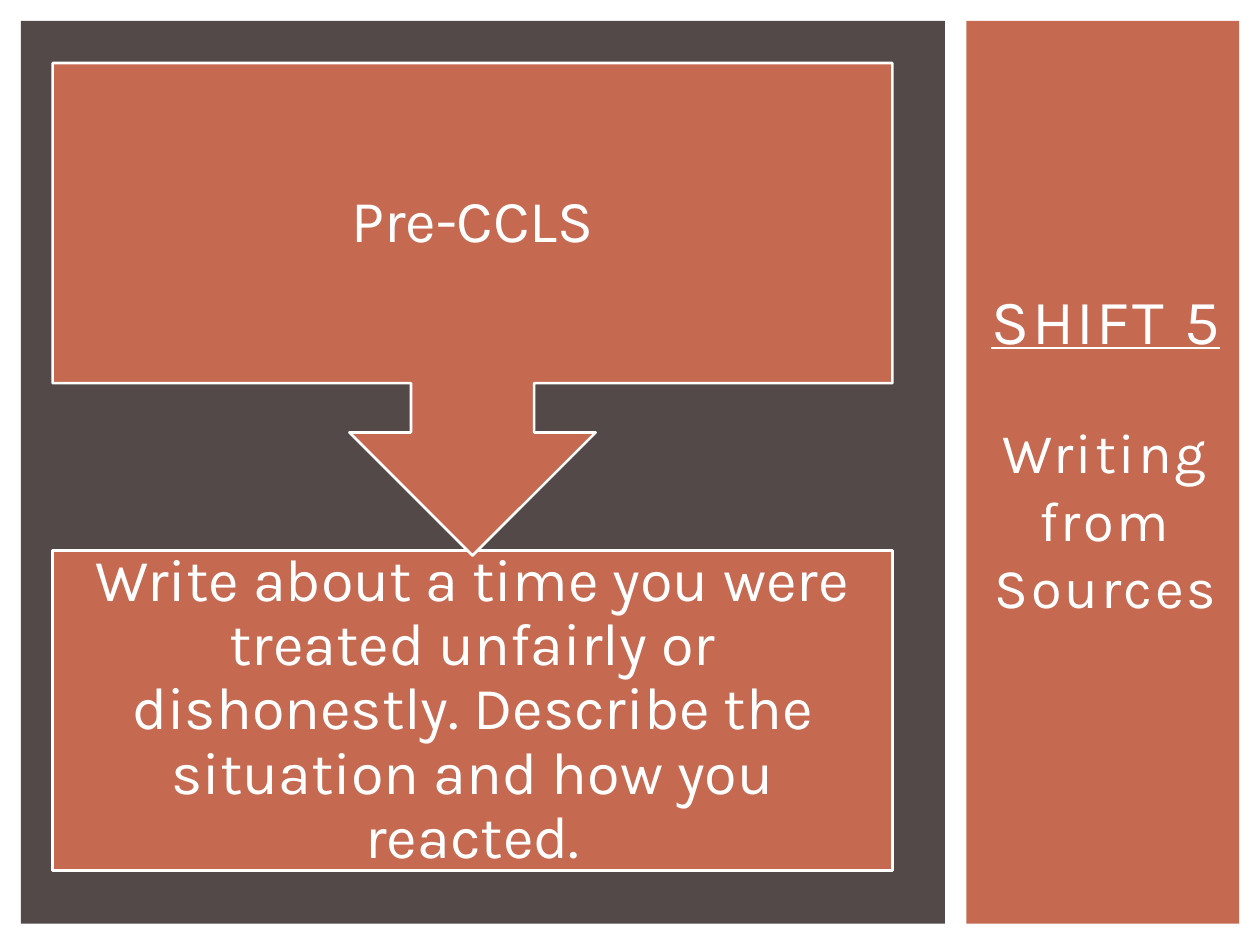
from pptx import Presentation
from pptx.dml.color import RGBColor
from pptx.enum.shapes import MSO_SHAPE as Shape
from pptx.enum.text import MSO_ANCHOR as Anchor, MSO_AUTO_SIZE as AutoSize, PP_ALIGN as Align
from pptx.util import Cm, Pt

RUST, BROWN, WHITE = "C66951", "534949", "FFFFFF"


def color(hex_string):
    """Turn a hex string into a colour."""
    return RGBColor.from_string(hex_string)


def add_block(slide, kind, box, fill, line=None):
    """Add a flat filled shape in a box given in centimetres."""
    shape = slide.shapes.add_shape(kind, *map(Cm, box))
    shape.shadow.inherit = False
    shape.fill.solid()
    shape.fill.fore_color.rgb = color(fill)
    if line:
        shape.line.color.rgb = color(line)
        shape.line.width = Pt(1.5)
    else:
        shape.line.fill.background()
    return shape


def format_paragraph(paragraph, size):
    """Centre a paragraph and give its runs the slide font."""
    paragraph.alignment = Align.CENTER
    for run in paragraph.runs:
        run.font.name = "Karla"
        run.font.size = Pt(size)
        run.font.color.rgb = color(WHITE)


def add_label(slide, box, text):
    """Add a centred, wrapping label in a box."""
    frame = slide.shapes.add_textbox(*map(Cm, box)).text_frame
    frame.word_wrap = True
    frame.vertical_anchor = Anchor.MIDDLE
    frame.margin_left = frame.margin_right = Cm(0.66)
    frame.margin_top = frame.margin_bottom = Cm(0.66)
    frame.text = text
    paragraph = frame.paragraphs[0]
    paragraph.line_spacing = 0.9
    format_paragraph(paragraph, 34)


def add_flow(slide, box, first, second):
    """Add a callout that points down to a second block."""
    left, top, width, height = box
    block_height = 6.45
    lower = (left, top + height - block_height, width, block_height)
    add_block(slide, Shape.RECTANGLE, lower, RUST, WHITE)
    add_label(slide, lower, second)
    callout = add_block(slide, Shape.UP_ARROW_CALLOUT, (left, top, width, 9.93), RUST, WHITE)
    callout.rotation = 180
    add_label(slide, (left, top, width, block_height), first)


def add_sidebar(slide, box, heading, topic):
    """Add the coloured sidebar and place the subtitle on it."""
    left, top, width, height = box
    panel = add_block(slide, Shape.RECTANGLE, box, RUST)
    subtitle = slide.placeholders[1]
    panel._element.addnext(subtitle._element)
    subtitle.left, subtitle.top = Cm(left + 0.21), Cm(top + 1.27)
    subtitle.width, subtitle.height = Cm(width - 0.3), Cm(height - 2.75)
    frame = subtitle.text_frame
    frame.auto_size = AutoSize.NONE
    frame.word_wrap = True
    frame.vertical_anchor = Anchor.MIDDLE
    frame.margin_left = frame.margin_right = Cm(0.1)
    frame.margin_bottom = Cm(0.8)
    frame.text = f"{heading}\n{topic}"
    for paragraph, size, space in zip(frame.paragraphs, (36, 32), (0, 35)):
        paragraph.space_before = Pt(space)
        format_paragraph(paragraph, size)
        for run in paragraph.runs:
            run._r.get_or_add_rPr().set("spc", "150")
    frame.paragraphs[0].runs[0].font.underline = True


def main():
    """Build and save the slide."""
    presentation = Presentation()
    presentation.slide_width, presentation.slide_height = Cm(25.4), Cm(19.05)
    slide = presentation.slides.add_slide(presentation.slide_layouts[0])
    title = slide.shapes.title._element
    title.getparent().remove(title)
    add_sidebar(slide, (19.48, 0.42, 5.5, 18.2), "SHIFT 5", "Writing from Sources")
    add_block(slide, Shape.RECTANGLE, (0.42, 0.42, 18.63, 18.2), BROWN)
    add_flow(
        slide,
        (1.06, 1.27, 16.93, 16.28),
        "Pre-CCLS",
        "Write about a time you were treated unfairly or dishonestly. "
        "Describe the situation and how you reacted.",
    )
    presentation.save("out.pptx")


if __name__ == "__main__":
    main()
